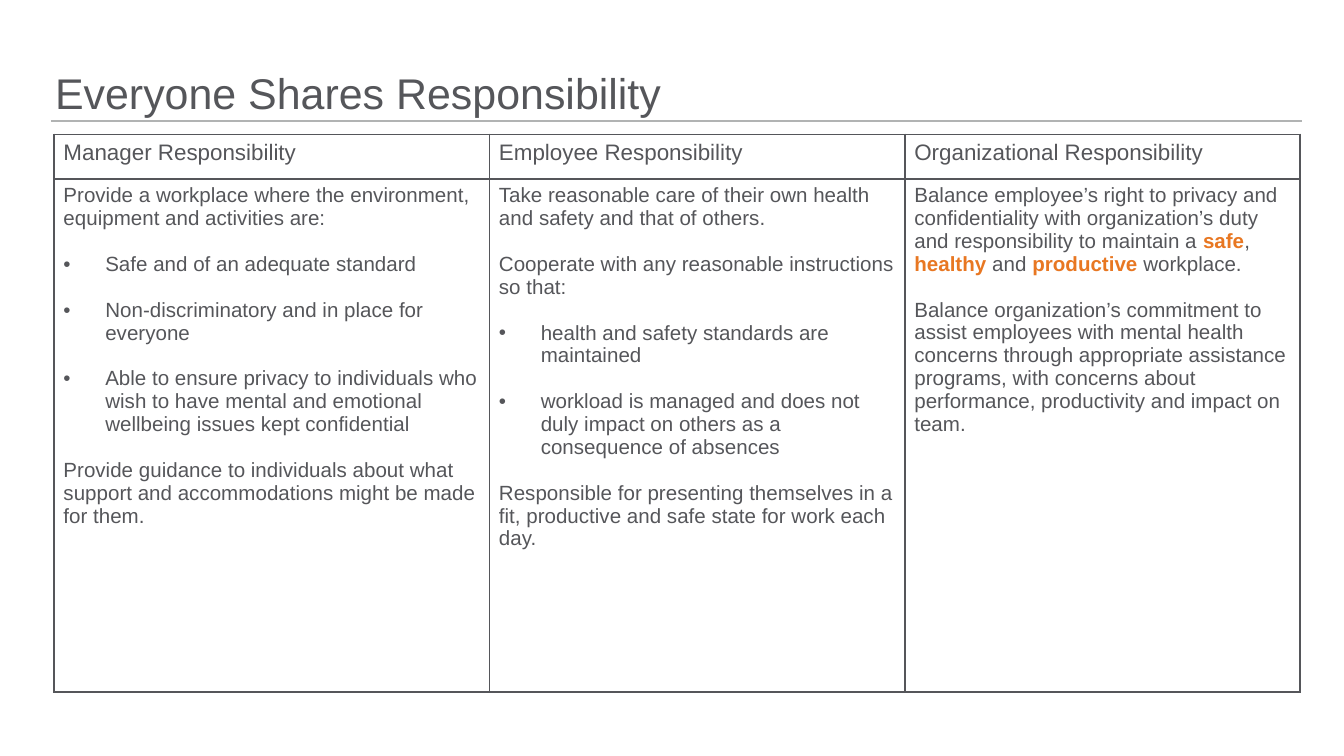
import pptx
import pptx.dml.color
import pptx.enum.shapes
import pptx.enum.text
import pptx.oxml
import pptx.oxml.ns
import pptx.util

Cm, Pt = pptx.util.Cm, pptx.util.Pt

FONT = "Arial"
GREY = "55565A"
RULE_GREY = "B1B3B3"
ORANGE = "E87722"

COLUMN_WIDTHS = [8.23, 7.85, 7.47]
ROW_HEIGHTS = [0.84, 9.7]
BULLET_INDENT = Cm(0.79)
BLANK_LINE = Pt(12.3)

# Each paragraph is (is bulleted, runs); each run is (text, is highlighted)
COLUMNS = [
    ("Manager Responsibility", [
        (False, [("Provide a workplace where the environment, equipment and activities are:", False)]),
        (True, [("Safe and of an adequate standard", False)]),
        (True, [("Non-discriminatory and in place for everyone", False)]),
        (True, [("Able to ensure privacy to individuals who wish to have mental and emotional "
                 "wellbeing issues kept confidential", False)]),
        (False, [("Provide guidance to individuals about what support and accommodations might "
                  "be made for them.", False)]),
    ]),
    ("Employee Responsibility", [
        (False, [("Take reasonable care of their own health and safety and that of others.", False)]),
        (False, [("Cooperate with any reasonable instructions so that:", False)]),
        (True, [("health and safety standards are maintained", False)]),
        (True, [("workload is managed and does not duly impact on others as a consequence of "
                 "absences", False)]),
        (False, [("Responsible for presenting themselves in a fit, productive and safe state for "
                  "work each day.", False)]),
    ]),
    ("Organizational Responsibility", [
        (False, [("Balance employee’s right to privacy and confidentiality with organization’s "
                  "duty and responsibility to maintain a ", False),
                 ("safe", True), (", ", False), ("healthy ", True), ("and ", False),
                 ("productive", True), (" workplace.", False)]),
        (False, [("Balance organization’s commitment to assist employees with mental health "
                  "concerns through appropriate assistance programs, with concerns about "
                  "performance, productivity and impact on team.", False)]),
    ]),
]


def color(hex_string):
    return pptx.dml.color.RGBColor.from_string(hex_string)


def add_run(paragraph, text, size, highlighted=False):
    run = paragraph.add_run()
    run.text = text
    run.font.name = FONT
    run.font.size = Pt(size)
    run.font.bold = highlighted
    run.font.color.rgb = color(ORANGE if highlighted else GREY)


def add_bullet(paragraph):
    properties = paragraph._p.get_or_add_pPr()
    properties.set("marL", str(BULLET_INDENT))
    properties.set("indent", str(-BULLET_INDENT))
    properties.append(pptx.oxml.parse_xml(
        f'<a:buFont {pptx.oxml.ns.nsdecls("a")} typeface="{FONT}"/>'))
    properties.append(pptx.oxml.parse_xml(
        f'<a:buChar {pptx.oxml.ns.nsdecls("a")} char="•"/>'))


def format_cell(cell):
    cell.margin_left = cell.margin_right = Cm(0.18)
    cell.margin_top = cell.margin_bottom = Cm(0.1)
    cell.fill.background()
    properties = cell._tc.get_or_add_tcPr()
    for position, side in enumerate(["lnL", "lnR", "lnT", "lnB"]):
        properties.insert(position, pptx.oxml.parse_xml(
            f'<a:{side} {pptx.oxml.ns.nsdecls("a")} w="{Pt(1)}"><a:solidFill>'
            f'<a:srgbClr val="{GREY}"/></a:solidFill></a:{side}>'))


def fill_cell(cell, paragraphs, size):
    format_cell(cell)
    for index, (bulleted, runs) in enumerate(paragraphs):
        frame = cell.text_frame
        paragraph = frame.add_paragraph() if index else frame.paragraphs[0]
        if index:
            paragraph.space_before = BLANK_LINE
        if bulleted:
            add_bullet(paragraph)
        for text, highlighted in runs:
            add_run(paragraph, text, size, highlighted)


def place_title(slide, left, top, width, height):
    title = slide.shapes.title
    title.left, title.top, title.width, title.height = left, top, width, height
    frame = title.text_frame
    frame.word_wrap = True
    frame.auto_size = pptx.enum.text.MSO_AUTO_SIZE.NONE
    frame.vertical_anchor = pptx.enum.text.MSO_ANCHOR.BOTTOM
    frame.margin_left = frame.margin_right = frame.margin_top = frame.margin_bottom = 0
    paragraph = frame.paragraphs[0]
    paragraph.alignment = pptx.enum.text.PP_ALIGN.LEFT
    paragraph.line_spacing = 0.9
    add_run(paragraph, "Everyone Shares Responsibility", 23)


def add_title_rule(slide, left, top, width):
    rule = slide.shapes.add_connector(
        pptx.enum.shapes.MSO_CONNECTOR.STRAIGHT, left, top, left + width, top)
    rule.line.color.rgb = color(RULE_GREY)
    rule.line.width = Pt(1)
    rule._element.spPr.append(pptx.oxml.parse_xml(
        f'<a:effectLst {pptx.oxml.ns.nsdecls("a")}/>'))


def add_responsibility_table(slide, left, top, width, height):
    table = slide.shapes.add_table(
        len(ROW_HEIGHTS), len(COLUMNS), left, top, width, height).table
    table.first_row = table.horz_banding = False
    for row, row_height in zip(table.rows, ROW_HEIGHTS):
        row.height = Cm(row_height)
    for index, (heading, paragraphs) in enumerate(COLUMNS):
        table.columns[index].width = Cm(COLUMN_WIDTHS[index])
        fill_cell(table.cell(0, index), [(False, [(heading, False)])], 12)
        fill_cell(table.cell(1, index), paragraphs, 11)


def main():
    presentation = pptx.Presentation()
    presentation.slide_width = Cm(25.4)
    presentation.slide_height = Cm(14.29)
    slide = presentation.slides.add_slide(presentation.slide_layouts[5])

    # Title and the rule below it
    place_title(slide, Cm(1.04), Cm(0), Cm(23.57), Cm(2.24))
    add_title_rule(slide, Cm(0.96), Cm(2.29), Cm(23.65))

    # Responsibilities by role
    add_responsibility_table(
        slide, Cm(1.02), Cm(2.54), Cm(sum(COLUMN_WIDTHS)), Cm(sum(ROW_HEIGHTS)))

    presentation.save("out.pptx")


if __name__ == "__main__":
    main()
